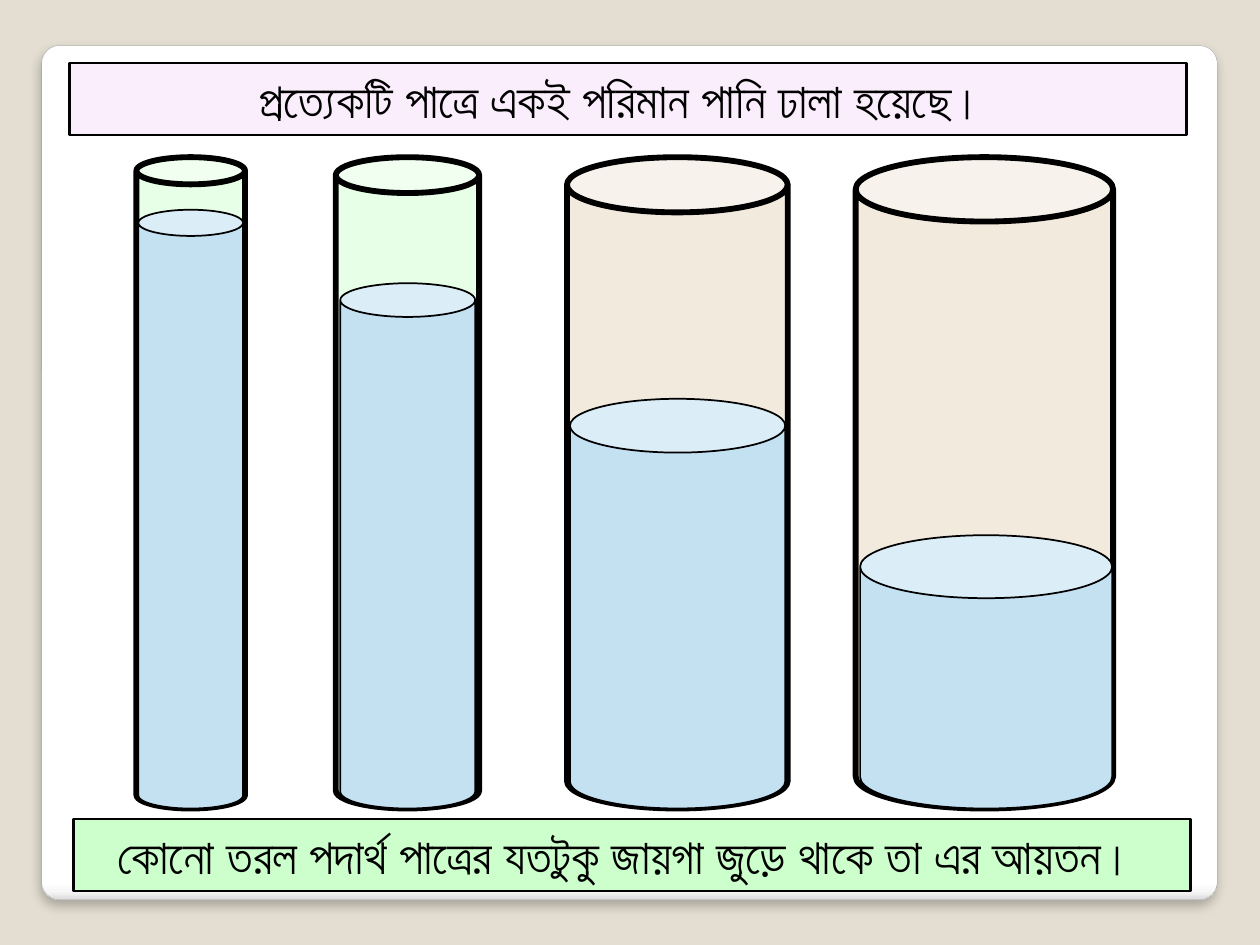
from dataclasses import dataclass

from lxml.etree import SubElement
from pptx import Presentation
from pptx.dml.color import RGBColor
from pptx.enum.shapes import MSO_SHAPE
from pptx.enum.text import MSO_AUTO_SIZE, PP_ALIGN
from pptx.oxml import parse_xml
from pptx.oxml.ns import nsdecls, qn
from pptx.util import Cm, Pt


@dataclass(frozen=True)
class Theme:
    """Colours, type and line weights of the slide."""
    background: str = "E3DED1"
    panel_stops: tuple = ((0, "FFFFFF"), (98, "FFFFFF"), (99, "F7F7F7"), (100, "DADADA"))
    panel_edge: str = "A4A4A4"
    ink: str = "000000"
    heading: str = "FBEEFC"
    conclusion: str = "CCFFCC"
    narrow_vessel: str = "E7FFE7"
    wide_vessel: str = "F3EADE"
    water: str = "C4E1F2"
    font: str = "Roboto"
    text_size: float = 28
    vessel_line: float = 3.35
    water_line: float = 1
    banner_line: float = 1.5
    panel_line: float = 0.16


THEME = Theme()
NUKTA = "়"
COMPOSED_LETTERS = {"ড": chr(0x09DC), "য": chr(0x09DF)}


@dataclass(frozen=True)
class Box:
    """A rectangle in centimetres."""
    left: float
    top: float
    width: float
    height: float

    def lengths(self):
        """Return the four lengths as Cm values."""
        return [Cm(v) for v in (self.left, self.top, self.width, self.height)]


def compose(text):
    """Join each Bengali base letter and its nukta into the single letter."""
    for base, letter in COMPOSED_LETTERS.items():
        text = text.replace(base + NUKTA, letter)
    return text


def paint(shape, fill, line, weight):
    """Give a shape a solid fill and an outline."""
    shape.fill.solid()
    shape.fill.fore_color.rgb = RGBColor.from_string(fill)
    shape.line.color.rgb = RGBColor.from_string(line)
    shape.line.width = Pt(weight)


def write(frame, text, *, size, color, font, align):
    """Write one formatted paragraph into a text frame."""
    paragraph = frame.paragraphs[0]
    paragraph.alignment = align
    run = paragraph.add_run()
    run.text = compose(text)
    run.font.size = Pt(size)
    run.font.name = font
    run.font.color.rgb = RGBColor.from_string(color)


def add_panel(slide, box):
    """Place the rounded white panel with its gradient and soft shadow."""
    panel = slide.shapes.add_shape(MSO_SHAPE.ROUNDED_RECTANGLE, *box.lengths())
    panel.adjustments[0] = 0.021
    panel.line.color.rgb = RGBColor.from_string(THEME.panel_edge)
    panel.line.width = Pt(THEME.panel_line)
    panel.fill.gradient()
    panel.fill.gradient_angle = 270
    properties = panel.element.spPr
    stops = properties.find(qn("a:gradFill")).find(qn("a:gsLst"))
    stops.clear()
    for position, color in THEME.panel_stops:
        stop = SubElement(stops, qn("a:gs"), pos=str(position * 1000))
        SubElement(stop, qn("a:srgbClr"), val=color)
    properties.append(parse_xml(
        f'<a:effectLst {nsdecls("a")}><a:outerShdw blurRad="{Pt(6)}" dist="{Pt(4)}" '
        f'dir="5400000" algn="tl" rotWithShape="0"><a:srgbClr val="{THEME.ink}">'
        '<a:alpha val="25000"/></a:srgbClr></a:outerShdw></a:effectLst>'))


def add_banner(slide, box, sentence, fill):
    """Place a framed sentence across the panel."""
    banner = slide.shapes.add_textbox(*box.lengths())
    paint(banner, fill, THEME.ink, THEME.banner_line)
    banner.text_frame.word_wrap = True
    banner.text_frame.auto_size = MSO_AUTO_SIZE.SHAPE_TO_FIT_TEXT
    write(banner.text_frame, sentence, size=THEME.text_size, color=THEME.ink,
          font=THEME.font, align=PP_ALIGN.CENTER)


def add_cylinder(slide, box, fill, weight):
    """Place one outlined cylinder."""
    cylinder = slide.shapes.add_shape(MSO_SHAPE.CAN, *box.lengths())
    cylinder.shadow.inherit = False
    paint(cylinder, fill, THEME.ink, weight)


def add_vessel(slide, box, fill, inset, water_width, water_depth):
    """Place a vessel with water standing on its floor."""
    add_cylinder(slide, box, fill, THEME.vessel_line)
    water = Box(box.left + inset, box.top + box.height - water_depth,
                water_width, water_depth)
    add_cylinder(slide, water, THEME.water, THEME.water_line)


def add_vessels(slide, box):
    """Stand the four vessels side by side in the box."""
    vessels = (
        (0, 2.19, THEME.narrow_vessel, 0.04, 2.11, 12.07),
        (4.02, 2.89, THEME.narrow_vessel, 0.09, 2.72, 10.59),
        (8.68, 4.45, THEME.wide_vessel, 0.06, 4.34, 8.26),
        (14.5, 5.19, THEME.wide_vessel, 0.09, 5.08, 5.51),
    )
    for offset, width, fill, inset, water_width, water_depth in vessels:
        vessel = Box(box.left + offset, box.top, width, box.height)
        add_vessel(slide, vessel, fill, inset, water_width, water_depth)


def main():
    """Build the slide and save it."""
    presentation = Presentation()
    presentation.slide_width, presentation.slide_height = Cm(25.4), Cm(19.05)
    slide = presentation.slides.add_slide(presentation.slide_layouts[6])
    slide.background.fill.solid()
    slide.background.fill.fore_color.rgb = RGBColor.from_string(THEME.background)

    add_panel(slide, Box(0.84, 0.92, 23.7, 17.22))
    add_vessels(slide, Box(2.75, 3.17, 19.69, 13.13))
    add_banner(slide, Box(1.48, 16.51, 22.52, 1.45),
               "কোনো তরল পদার্থ পাত্রের যতটুকু জায়গা জুড়ে থাকে তা এর আয়তন। ", THEME.conclusion)
    add_banner(slide, Box(1.4, 1.27, 22.52, 1.45),
               "প্রত্যেকটি পাত্রে একই পরিমান পানি ঢালা হয়েছে। ", THEME.heading)
    presentation.save("out.pptx")


if __name__ == "__main__":
    main()
